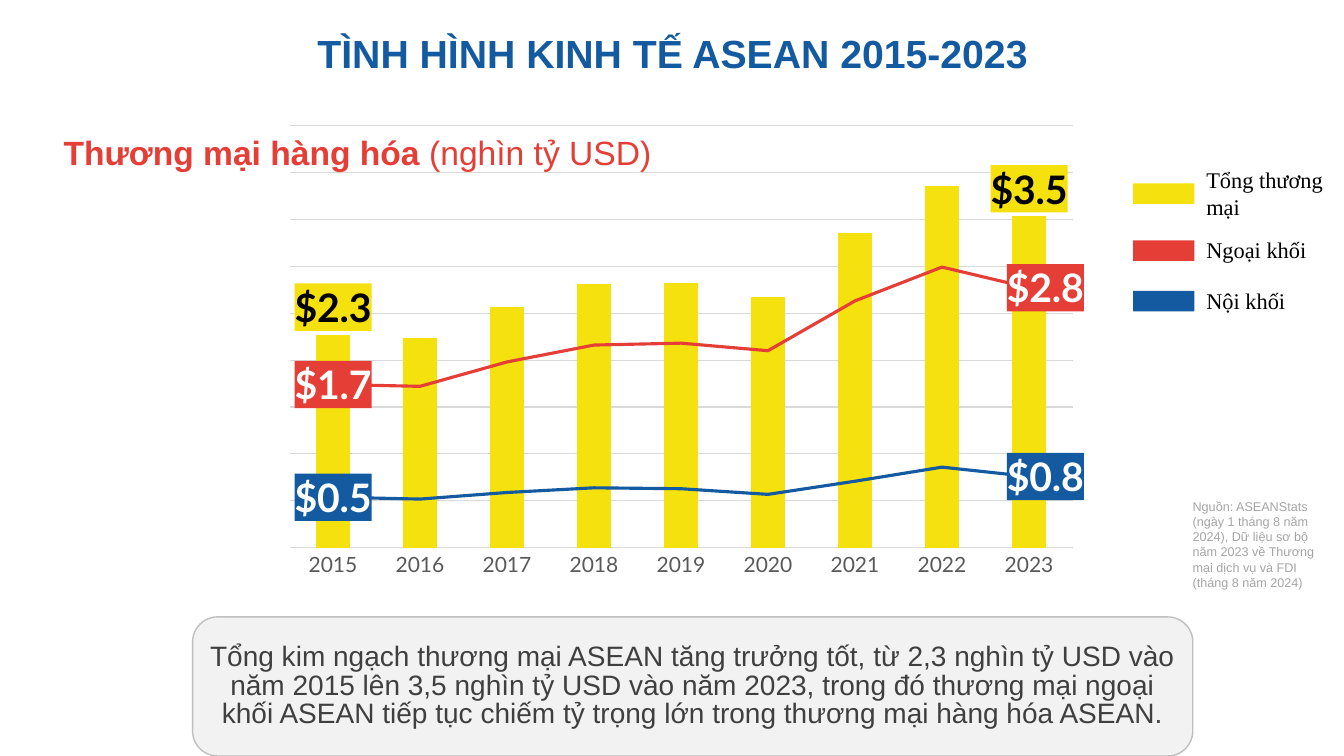
import pptx
import pptx.chart.data
import pptx.dml.color
import pptx.enum.chart
import pptx.enum.shapes
import pptx.enum.text
import pptx.oxml
import pptx.oxml.ns
import pptx.util

WIDTH, HEIGHT = pptx.util.Inches(13.33), pptx.util.Inches(7.5)
YELLOW, BLUE, RED, GRID = "F5E10E", "135AA1", "E53E36", "D9D9D9"
ALIGN = pptx.enum.text.PP_ALIGN
ANCHOR = pptx.enum.text.MSO_ANCHOR
SHAPE = pptx.enum.shapes.MSO_SHAPE
YEARS = [str(year) for year in range(2015, 2024)]
TOTAL = [2.27, 2.24, 2.57, 2.81, 2.82, 2.67, 3.35, 3.85, 3.53]
INTRA = [0.54, 0.52, 0.59, 0.64, 0.63, 0.57, 0.71, 0.86, 0.76]
EXTRA = [1.74, 1.72, 1.98, 2.16, 2.18, 2.10, 2.63, 2.99, 2.77]


def percent(left, top, width, height):
    """Turn percentages of the slide into a box."""
    return tuple(int(share * side / 100) for share, side in
                 zip((left, top, width, height), (WIDTH, HEIGHT, WIDTH, HEIGHT)))


def inside(box, left, top, width, height):
    """Return the part of a box given by shares of its size."""
    x, y, w, h = box
    return int(x + left * w), int(y + top * h), int(width * w), int(height * h)


def paint(color_format, color):
    """Set a colour from a hex string."""
    color_format.rgb = pptx.dml.color.RGBColor.from_string(color)


def fill(target, color):
    """Fill a shape or a chart format with a solid colour."""
    target.fill.solid()
    paint(target.fill.fore_color, color)


def style_font(font, color, **values):
    """Apply a colour and a dict of values to a font."""
    for key, value in values.items():
        setattr(font, key, pptx.util.Pt(value) if key == "size" else value)
    paint(font.color, color)


def write(frame, runs, size, name, align=ALIGN.LEFT, anchor=ANCHOR.TOP, inset=(0.1, 0.05), spacing=None):
    """Write one paragraph of (text, colour, bold) runs into a text frame."""
    across, down = (pptx.util.Inches(length) for length in inset)
    layout = {"word_wrap": True, "vertical_anchor": anchor, "margin_left": across,
              "margin_right": across, "margin_top": down, "margin_bottom": down}
    for key, value in layout.items():
        setattr(frame, key, value)
    paragraph = frame.paragraphs[0]
    paragraph.alignment, paragraph.line_spacing = align, spacing
    for text, color, bold in runs:
        run = paragraph.add_run()
        run.text = text
        style_font(run.font, color, size=size, name=name, bold=bold)


def add_text(slide, box, runs, size, name, **layout):
    """Add a text box."""
    write(slide.shapes.add_textbox(*box).text_frame, runs, size, name, **layout)


def add_block(slide, kind, box, color):
    """Add a filled shape without line or shadow."""
    block = slide.shapes.add_shape(kind, *box)
    block.shadow.inherit = False
    fill(block, color)
    block.line.fill.background()
    return block


def chart_xml(markup):
    """Build a chart element from markup."""
    head, rest = markup.split(">", 1)
    return pptx.oxml.parse_xml(f"{head} {pptx.oxml.ns.nsdecls('c', 'a')}>{rest}")


def split_lines(chart):
    """Move every series after the first into a line plot on the same axes."""
    bars = chart.element.xpath(".//c:barChart")[0]
    lines = chart_xml('<c:lineChart><c:grouping val="standard"/><c:varyColors val="0"/></c:lineChart>')
    for series in bars.xpath("c:ser")[1:]:
        for flag in series.xpath("c:invertIfNegative"):
            series.remove(flag)
        lines.append(series)
    lines.append(chart_xml('<c:marker val="1"></c:marker>'))
    for axis in bars.xpath("c:axId"):
        lines.append(chart_xml(f'<c:axId val="{axis.get("val")}"></c:axId>'))
    bars.addnext(lines)


def fix_plot_area(chart):
    """Pin the inner plot area to shares of the chart."""
    area = chart.element.xpath(".//c:plotArea")[0]
    for layout in area.xpath("c:layout"):
        area.remove(layout)
    shares = "".join(f'<c:{key} val="{value}"/>' for key, value in
                     {"x": 0.02, "y": 0.02, "w": 0.96, "h": 0.9}.items())
    area.insert(0, chart_xml(
        '<c:layout><c:manualLayout><c:layoutTarget val="inner"/><c:xMode val="edge"/>'
        f'<c:yMode val="edge"/>{shares}</c:manualLayout></c:layout>'))


def set_ground(labels, color, shift=0):
    """Give one label, or a group of them, a dollar format, a filled ground and a shift."""
    for former in labels.xpath("c:layout | c:numFmt | c:spPr"):
        labels.remove(former)
    parts = ['<c:numFmt formatCode="&quot;$&quot;0.0" sourceLinked="0"></c:numFmt>',
             f'<c:spPr><a:solidFill><a:srgbClr val="{color}"/></a:solidFill><a:ln><a:noFill/></a:ln></c:spPr>']
    if shift:
        parts.insert(0, f'<c:layout><c:manualLayout><c:x val="{shift}"/><c:y val="0"/></c:manualLayout></c:layout>')
    start = len(labels.xpath("c:idx | c:dLbl"))
    for place, part in enumerate(parts, start):
        labels.insert(place, chart_xml(part))


def label_ends(chart, series, color, text_color, position, shift):
    """Label the first and last points of a series on a filled ground."""
    for index in (0, len(YEARS) - 1):
        label = series.points[index].data_label
        style_font(label.font, text_color, size=28, name="Lato", bold=True)
        label.position = position
    for key in ("show_value", "show_legend_key", "show_category_name", "show_series_name"):
        setattr(series.data_labels, key, False)
    group = chart.element.xpath(f'.//c:ser[c:order/@val="{series.index}"]/c:dLbls')[0]
    first, last = group.xpath("c:dLbl")
    set_ground(first, color)
    set_ground(last, color, shift)
    set_ground(group, color)


def add_trade_chart(slide, box):
    """Add columns for total trade with lines for its two parts."""
    data = pptx.chart.data.CategoryChartData()
    data.categories = YEARS
    for name, values in (("Tổng thương mại", TOTAL), ("Nội khối", INTRA), ("Ngoại khối", EXTRA)):
        data.add_series(name, values)
    chart = slide.shapes.add_chart(pptx.enum.chart.XL_CHART_TYPE.COLUMN_CLUSTERED, *box, data).chart
    chart.has_legend = chart.has_title = False
    style_font(chart.font, "595959", size=10, name="Arial")
    split_lines(chart)
    fix_plot_area(chart)
    years, values = chart.category_axis, chart.value_axis
    style_font(years.tick_labels.font, "595959", size=15, name="Lato")
    years.major_tick_mark = pptx.enum.chart.XL_TICK_MARK.NONE
    values.has_major_gridlines, values.visible = True, False
    values.minimum_scale, values.maximum_scale, values.major_unit = 0, 4.5, 0.5
    for line in (years.format.line, values.major_gridlines.format.line):
        line.width = pptx.util.Pt(0.75)
        paint(line.color, GRID)
    position = pptx.enum.chart.XL_LABEL_POSITION
    columns, lines = chart.plots
    columns.gap_width, columns.vary_by_categories = 150, False
    total = columns.series[0]
    fill(total.format, YELLOW)
    label_ends(chart, total, YELLOW, "000000", position.OUTSIDE_END, 0)
    for series, color in zip(lines.series, (BLUE, RED)):
        series.smooth = False
        series.marker.style = pptx.enum.chart.XL_MARKER_STYLE.NONE
        series.format.line.width = pptx.util.Pt(2.25)
        paint(series.format.line.color, color)
        label_ends(chart, series, color, "FFFFFF", position.CENTER, 0.02)


def add_legend(slide, box):
    """Add the colour key, one swatch and name per row."""
    rows = (("Tổng thương mại", YELLOW, 0.2, 0.4), ("Ngoại khối", RED, 0.56, 0.24), ("Nội khối", BLUE, 0.88, 0.24))
    for name, color, middle, height in rows:
        add_block(slide, SHAPE.RECTANGLE, inside(box, 0, middle - 0.06, 0.29, 0.13), color)
        add_text(slide, inside(box, 0.3, middle - height / 2, 0.7, height),
                 [(name, "000000", False)], 16, "Times New Roman", anchor=ANCHOR.MIDDLE)


def add_summary(slide, box):
    """Add the rounded panel with the conclusion."""
    panel = add_block(slide, SHAPE.ROUNDED_RECTANGLE, box, "F2F2F2")
    panel.adjustments[0] = 0.18
    panel.line.width = pptx.util.Pt(1)
    paint(panel.line.color, "BFBFBF")
    conclusion = ("Tổng kim ngạch thương mại ASEAN tăng trưởng tốt, từ 2,3 nghìn tỷ USD vào năm 2015 "
                  "lên 3,5 nghìn tỷ USD vào năm 2023, trong đó thương mại ngoại khối ASEAN tiếp tục "
                  "chiếm tỷ trọng lớn trong thương mại hàng hóa ASEAN.")
    write(panel.text_frame, [(conclusion, "3F3F3F", False)], 20, "Arial",
          align=ALIGN.CENTER, anchor=ANCHOR.MIDDLE, spacing=0.85)


def main():
    """Build the slide and save it."""
    deck = pptx.Presentation()
    deck.slide_width, deck.slide_height = WIDTH, HEIGHT
    slide = deck.slides.add_slide(deck.slide_layouts[6])
    add_trade_chart(slide, percent(20.33, 15.33, 60.69, 62.13))
    add_summary(slide, percent(14.33, 81.6, 74.42, 18.4))
    add_legend(slide, percent(84.32, 21.33, 15.68, 20.93))
    source = ("Nguồn: ASEANStats (ngày 1 tháng 8 năm 2024), Dữ liệu sơ bộ năm 2023 về "
              "Thương mại dịch vụ và FDI (tháng 8 năm 2024)")
    add_text(slide, percent(88, 65.33, 10.8, 13.47), [(source, "A5A5A5", False)], 9, "Arial")
    add_text(slide, percent(17.48, 3.87, 65.12, 6.27), [("TÌNH HÌNH KINH TẾ ASEAN 2015-2023", BLUE, True)],
             28, "Arial", align=ALIGN.CENTER, inset=(0, 0))
    heading = [("Thương mại hàng hóa ", RED, True), ("(nghìn tỷ USD)", RED, False)]
    add_text(slide, percent(4.73, 17.47, 59.94, 5.33), heading, 24, "Arial", anchor=ANCHOR.MIDDLE, inset=(0, 0))
    deck.save("out.pptx")


if __name__ == "__main__":
    main()
